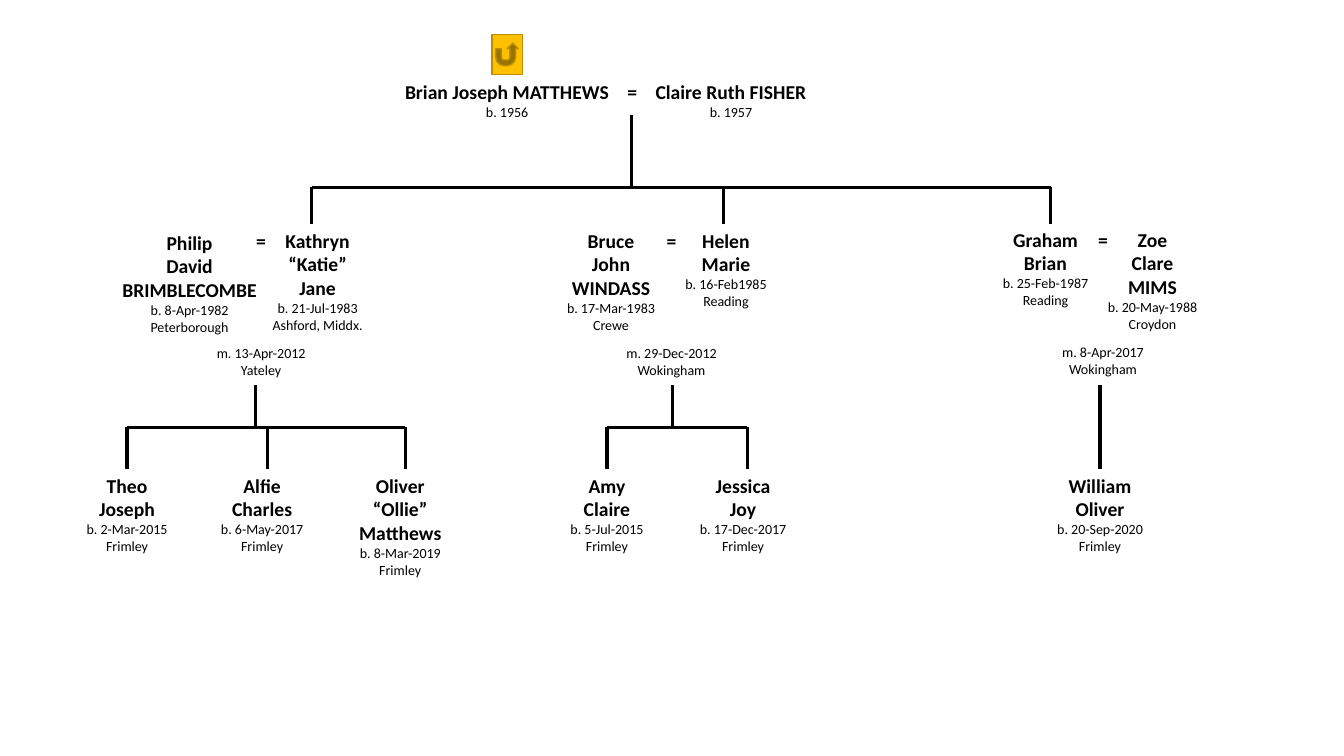
from pptx import Presentation
from pptx.dml.color import RGBColor
from pptx.enum.shapes import MSO_CONNECTOR, MSO_SHAPE
from pptx.enum.text import MSO_AUTO_SIZE, PP_ALIGN
from pptx.oxml.ns import qn
from pptx.util import Inches, Pt
from lxml import etree

STRAIGHT = MSO_CONNECTOR.STRAIGHT
RETURN_BUTTON = MSO_SHAPE.ACTION_BUTTON_RETURN
GROW = MSO_AUTO_SIZE.SHAPE_TO_FIT_TEXT
CENTER = PP_ALIGN.CENTER

COLORS = {"ink": "000000", "button": "FFC000", "button_line": "BD8E00"}
FONT = "Calibri"
NAME_SIZE, DETAIL_SIZE = 14, 10
LINE_HEIGHT = 1.22 / 72  # inches per point of text size
MARRIAGE_GAP = Pt(66)

ROOT_TOP, ROOT_DROP, ROOT_BAR = 0.74, 1.14, 1.86
COUPLE_TOP, COUPLE_DROP, COUPLE_BAR = 2.22, 3.82, 4.24
CHILD_TOP = 4.65

# Person: centre, top, width, name lines, detail lines
ROOT_COUPLE = [
    (5.03, ROOT_TOP, 2.24, ["Brian Joseph MATTHEWS"], ["b. 1956"]),
    (6.27, ROOT_TOP, 0.3, ["="], []),
    (7.25, ROOT_TOP, 1.71, ["Claire Ruth FISHER"], ["b. 1957"]),
]

FAMILIES = [
    {
        "partners": [
            (1.88, 2.24, 1.55, ["Philip", "David", "BRIMBLECOMBE"],
             ["b. 8-Apr-1982", "Peterborough"]),
            (3.15, 2.22, 1.11, ["Kathryn", "“Katie”", "Jane"],
             ["b. 21-Jul-1983", "Ashford, Middx."]),
        ],
        "marriage": (2.59, 2.22, 1.1, ["="], ["m. 13-Apr-2012", "Yateley"]),
        "descent": 3.09,
        "drop": 2.53,
        "children": [
            (1.26, CHILD_TOP, 1.02, ["Theo", "Joseph"], ["b. 2-Mar-2015", "Frimley"]),
            (2.6, CHILD_TOP, 1.03, ["Alfie", "Charles"], ["b. 6-May-2017", "Frimley"]),
            (3.97, CHILD_TOP, 1.03, ["Oliver", "“Ollie”", "Matthews"],
             ["b. 8-Mar-2019", "Frimley"]),
        ],
        "child_lines": [1.26, 2.65, 4.02],
    },
    {
        "partners": [
            (6.06, 2.22, 1.09, ["Bruce", "John", "WINDASS"],
             ["b. 17-Mar-1983", "Crewe"]),
            (7.2, 2.22, 1.02, ["Helen", "Marie"], ["b. 16-Feb1985", "Reading"]),
        ],
        "marriage": (6.66, 2.22, 1.11, ["="], ["m. 29-Dec-2012", "Wokingham"]),
        "descent": 7.18,
        "drop": 6.67,
        "children": [
            (6.02, CHILD_TOP, 0.94, ["Amy", "Claire"], ["b. 5-Jul-2015", "Frimley"]),
            (7.37, CHILD_TOP, 1.07, ["Jessica", "Joy"], ["b. 17-Dec-2017", "Frimley"]),
        ],
        "child_lines": [6.02, 7.41],
    },
    {
        "partners": [
            (10.37, 2.21, 1.07, ["Graham", "Brian"], ["b. 25-Feb-1987", "Reading"]),
            (11.43, 2.21, 1.11, ["Zoe", "Clare", "MIMS"],
             ["b. 20-May-1988", "Croydon"]),
        ],
        "marriage": (10.94, 2.21, 1.03, ["="], ["m. 8-Apr-2017", "Wokingham"]),
        "descent": 10.42,
        "drop": 10.91,
        "children": [
            (10.91, CHILD_TOP, 1.07, ["William", "Oliver"],
             ["b. 20-Sep-2020", "Frimley"]),
        ],
        "child_lines": [10.91],
    },
]


def rgb(key):
    return RGBColor.from_string(COLORS[key])


def add_person(s, centre, top, width, names, details, gap=0):
    """Bold names above plain details; gap separates the two groups."""
    height = 0.1 + LINE_HEIGHT * (NAME_SIZE * len(names) + DETAIL_SIZE * len(details))
    height += gap / Inches(1)
    sp = s.shapes.add_textbox(Inches(centre - width / 2), Inches(top),
                              Inches(width), Inches(height))
    tf = sp.text_frame
    tf.word_wrap = False
    tf.auto_size = GROW
    tf.text = "\n".join(names + details)
    for i, p in enumerate(tf.paragraphs):
        is_name = i < len(names)
        p.alignment = CENTER
        if gap and i == len(names):
            p.space_before = gap
        font = p.runs[0].font
        font.name = FONT
        font.size = Pt(NAME_SIZE if is_name else DETAIL_SIZE)
        font.bold = is_name
        font.color.rgb = rgb("ink")


def add_line(s, x1, y1, x2, y2):
    line = s.shapes.add_connector(STRAIGHT, Inches(x1), Inches(y1),
                                  Inches(x2), Inches(y2))
    line.line.color.rgb = rgb("ink")
    line.line.width = Pt(2.25)
    etree.SubElement(line._element.spPr, qn("a:effectLst"))


def add_descent(s, parent_x, top, bar, bottom, child_xs):
    """Line down from the parents, a bar, and a line down to each child."""
    add_line(s, parent_x, top, parent_x, bar)
    if len(child_xs) > 1:
        add_line(s, child_xs[0], bar, child_xs[-1], bar)
    for x in child_xs:
        add_line(s, x, bar, x, bottom)


def add_return_button(s, left, top, width, height):
    sp = s.shapes.add_shape(RETURN_BUTTON, Inches(left), Inches(top),
                            Inches(width), Inches(height))
    sp.shadow.inherit = False
    sp.fill.solid()
    sp.fill.fore_color.rgb = rgb("button")
    sp.line.color.rgb = rgb("button_line")
    sp.line.width = Pt(1)


def add_root(s):
    add_return_button(s, 4.88, 0.34, 0.3, 0.4)
    for person in ROOT_COUPLE:
        add_person(s, *person)
    add_descent(s, 6.26, ROOT_DROP, ROOT_BAR, COUPLE_TOP,
                [family["descent"] for family in FAMILIES])


def add_family(s, family):
    for person in family["partners"] + family["children"]:
        add_person(s, *person)
    add_person(s, *family["marriage"], gap=MARRIAGE_GAP)
    add_descent(s, family["drop"], COUPLE_DROP, COUPLE_BAR, CHILD_TOP,
                family["child_lines"])


def main():
    prs = Presentation()
    prs.slide_width, prs.slide_height = Inches(13.33), Inches(7.5)
    s = prs.slides.add_slide(prs.slide_layouts[6])
    add_root(s)
    for family in FAMILIES:
        add_family(s, family)
    prs.save("out.pptx")


if __name__ == "__main__":
    main()
